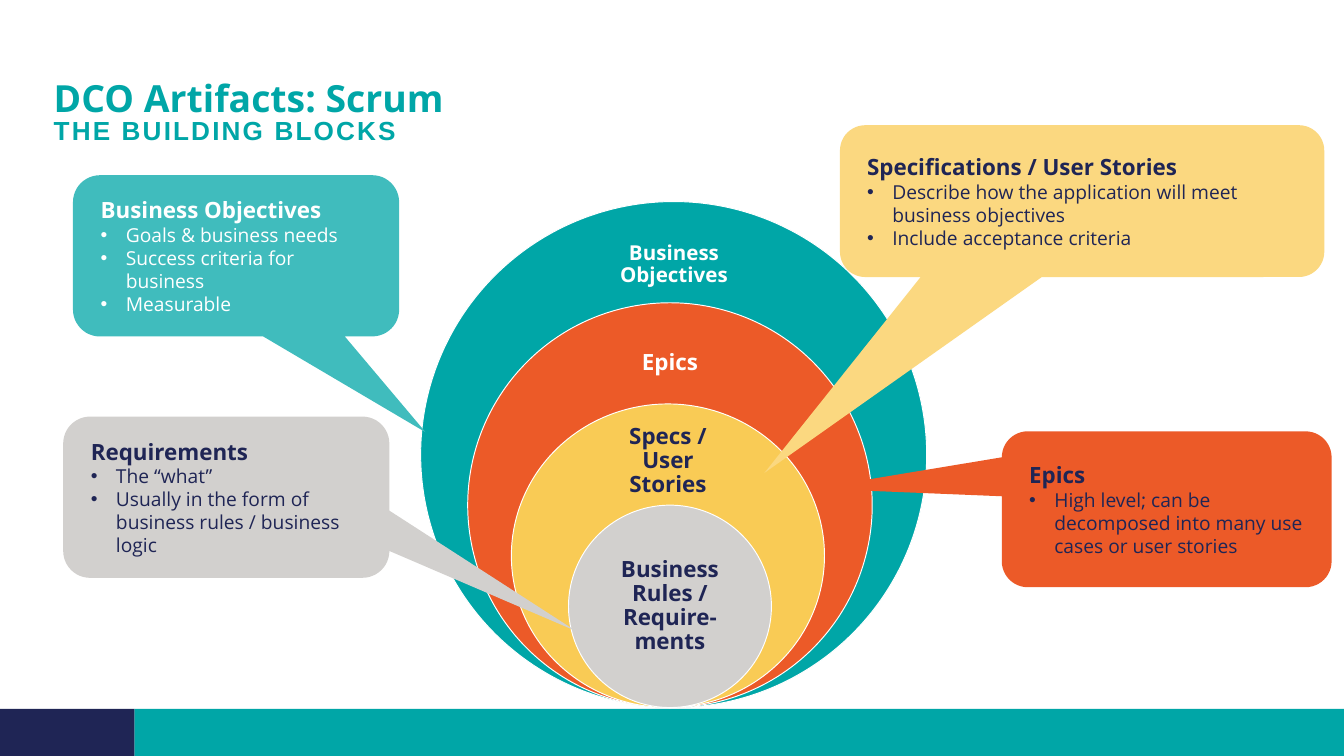
from lxml.etree import SubElement as Sub
from pptx import Presentation
from pptx.dml.color import RGBColor as RGB
from pptx.enum.shapes import MSO_SHAPE as Kind
from pptx.enum.text import MSO_ANCHOR as Anchor, PP_ALIGN as Align
from pptx.oxml.ns import qn
from pptx.util import Inches, Pt

TEAL = RGB(0x00, 0xA6, 0xA7)
AQUA = RGB(0x40, 0xBC, 0xBD)
NAVY = RGB(0x1F, 0x25, 0x55)
RUST = RGB(0xEC, 0x5A, 0x28)
GOLD = RGB(0xF9, 0xCB, 0x55)
SAND = RGB(0xFB, 0xD8, 0x80)
GRAY = RGB(0xD2, 0xD0, 0xCE)
WHITE = RGB(0xFF, 0xFF, 0xFF)

deck = Presentation()
deck.slide_width = Inches(10)
deck.slide_height = deck.slide_width * 9 // 16
slide = deck.slides.add_slide(deck.slide_layouts[6])
CELL = deck.slide_width / 100  # square grid of 100 columns
ROWS = deck.slide_height / CELL
HANG = Pt(13.5)  # bullet indent


def draw(kind, *box, fill, line=None):
    shape = slide.shapes.add_shape(kind, *[round(n * CELL) for n in box])
    shape.shadow.inherit = False
    shape.fill.solid()
    shape.fill.fore_color.rgb = fill
    if line is None:
        shape.line.fill.background()
    else:
        shape.line.color.rgb = line
        shape.line.width = Pt(0.5)
    return shape


def write(text, *box, host=None, size=12, color=NAVY, font="Open Sans", pad=(0, 0),
          anchor=Anchor.MIDDLE, align=Align.LEFT, gap=0.9, track=0, points=()):
    host = host or slide.shapes.add_textbox(*[round(n * CELL) for n in box])
    frame = host.text_frame
    frame.word_wrap = True
    frame.vertical_anchor = anchor
    frame.margin_left = frame.margin_right = round(pad[0] * CELL)
    frame.margin_top = frame.margin_bottom = round(pad[1] * CELL)
    for i, words in enumerate([text, *points]):
        para = frame.add_paragraph() if i else frame.paragraphs[0]
        para.alignment = align
        para.line_spacing = gap
        if i:
            props = para._p.get_or_add_pPr()
            props.set("marL", str(HANG))
            props.set("indent", str(-HANG))
            Sub(props, qn("a:buFont"), typeface="Arial")
            Sub(props, qn("a:buChar"), char="•")
        run = para.add_run()
        run.text = words
        run.font.name = font
        run.font.size = Pt(10.3 if i else size)
        run.font.bold = not i
        run.font.color.rgb = color
        if track:
            run._r.get_or_add_rPr().set("spc", str(track))


# Footer band
draw(Kind.RECTANGLE, 10, 52.75, 90, ROWS - 52.75, fill=TEAL)
draw(Kind.RECTANGLE, 0, 52.75, 10, ROWS - 52.75, fill=NAVY)

# Headings
write("DCO Artifacts: Scrum", 4, 2, 92, 7, size=20, color=TEAL, anchor=Anchor.BOTTOM)
write("THE BUILDING BLOCKS", 4, 8.4, 93.4, 2.9, size=14, color=TEAL, font="Arial", track=112)

# Nested circles, all resting on one base line
BASE, STEP = 52.65, 7.53
rings = [
    ("Business Objectives", 31.3, 37.65, TEAL, (44.9, 16.9, 10.5, 5.6), 11, WHITE),
    ("Epics", 34.8, 30.1, RUST, (44.6, 24.35, 10.5, 5.4), 12, WHITE),
    ("Specs / User Stories", 38.05, 23.3, GOLD, (44.3, 31.75, 10.8, 5.1), 12, NAVY),
    ("Business Rules / Require-ments", 42.3, 15.1, GRAY, (44.5, 41.35, 10.7, 7.5), 12, NAVY),
]
for i, (name, left, wide, fill, box, size, color) in enumerate(rings):
    tall = STEP * (5 - i)
    draw(Kind.OVAL, left, BASE - tall, wide, tall, fill=fill, line=WHITE)
    write(name, *box, size=size, color=color, pad=(0.9, 0.9), align=Align.CENTER)

# Callouts pointing at the circles
notes = [
    ("Specifications / User Stories", (62.5, 9.32, 36.04, 11.3), (-0.656, 1.79), SAND, NAVY,
     ["Describe how the application will meet business objectives",
      "Include acceptance criteria"]),
    ("Epics", (74.54, 32.1, 24.54, 11.6), (-1.071, -0.133), RUST, NAVY,
     ["High level; can be decomposed into many use cases or user stories"]),
    ("Business Objectives", (5.43, 13.04, 24.27, 12), (0.581, 1.094), AQUA, WHITE,
     ["Goals & business needs", "Success criteria for business", "Measurable"]),
    ("Requirements", (4.7, 31, 24.27, 12), (1.072, 0.83), GRAY, NAVY,
     ["The “what”", "Usually in the form of business rules / business logic"]),
]
for name, box, tip, fill, color, points in notes:
    note = draw(Kind.ROUNDED_RECTANGULAR_CALLOUT, *box, fill=fill)
    note.adjustments[0], note.adjustments[1] = tip
    note.adjustments[2] = 0.167
    write(name, host=note, color=color, pad=(1.47, 1.2), gap=1, points=points)

deck.save("out.pptx")
